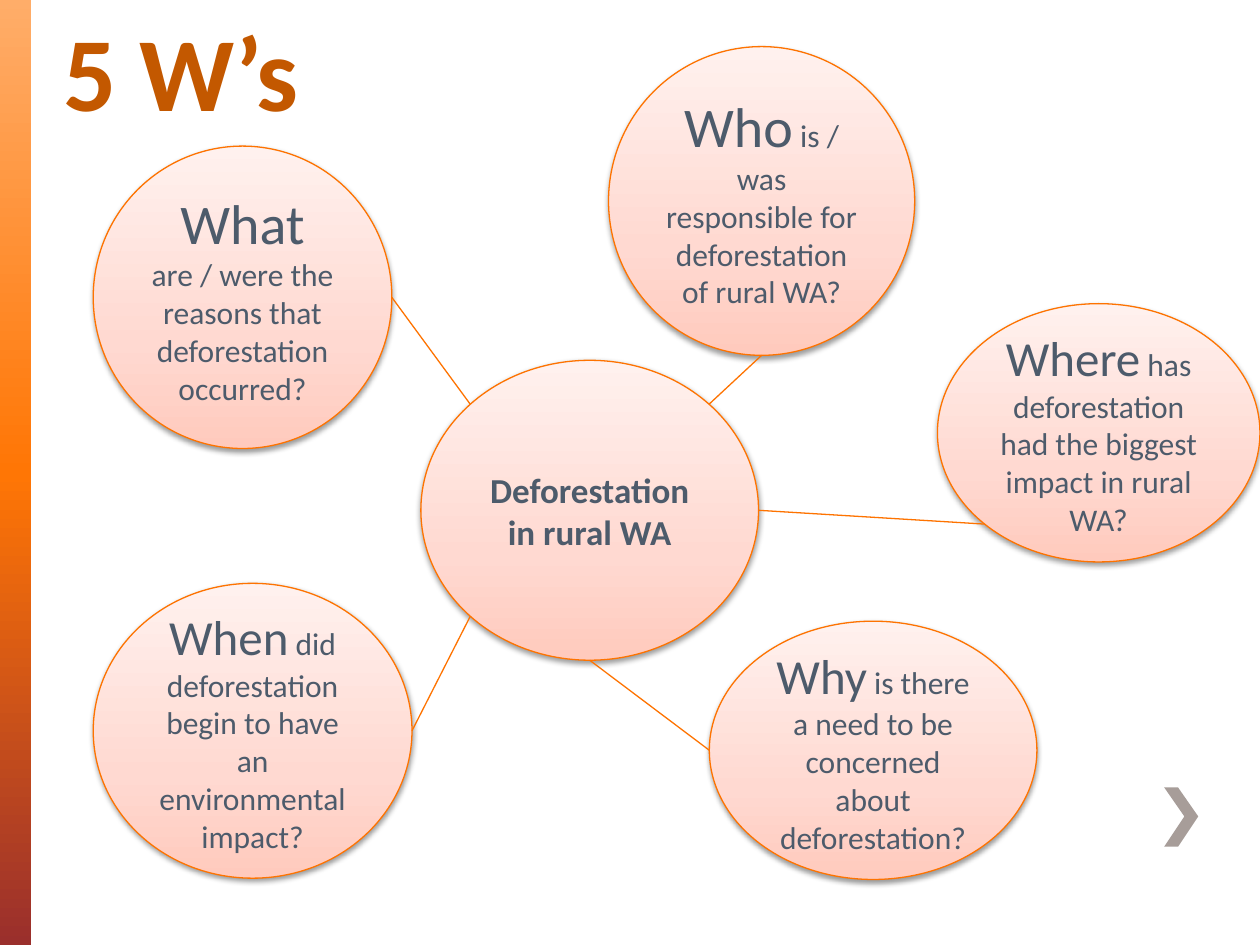
import math

import lxml.etree
import pptx
import pptx.dml.color
import pptx.enum.shapes
import pptx.enum.text
import pptx.oxml.ns
import pptx.util

PX = 9144
FONT = "Calibri"
COLORS = {
    "title": "C35800", "text": "4D5B6B", "line": "FE7300", "chevron": "A79D99", "shadow": "000000",
    "band_top": "FFAD69", "band_mid": "FF7605", "band_end": "9A2F2C",
    "bubble_low": "FFCABD", "bubble_mid": "FFD9D1", "bubble_high": "FFF1EE",
}
BAND_STOPS = [(0, "band_top"), (50, "band_mid"), (100, "band_end")]
BUBBLE_STOPS = [(0, "bubble_low"), (35, "bubble_mid"), (100, "bubble_high")]
SHAPES = pptx.enum.shapes.MSO_SHAPE
ALIGN = pptx.enum.text.PP_ALIGN
ANCHOR = pptx.enum.text.MSO_ANCHOR

CENTRE = (334, 286, 268, 238)
QUESTIONS = [
    ((483, 37, 243, 245), "Who", " is / was responsible for deforestation of rural WA?", 32, "bottom", "top right"),
    ((74, 116, 237, 240), "What ", "are / were the reasons that deforestation occurred?", 32, "right", "top left"),
    ((744, 241, 256, 205), "Where", " has deforestation had the biggest impact in rural WA?", 28, "bottom left", "right"),
    ((74, 463, 253, 234), "When", " did deforestation begin to have an environmental impact?", 28, "right", "bottom left"),
    ((563, 493, 260, 205), "Why", " is there a need to be concerned about deforestation?", 28, "left", "bottom"),
]
ANGLES = {"right": 0, "bottom": 90, "bottom left": 135, "left": 180, "top left": 225, "top right": 315}


def rgb(name):
    return pptx.dml.color.RGBColor.from_string(COLORS[name])


def emu(lengths):
    return [round(n * PX) for n in lengths]


def sub(parent, tag, **attrs):
    return lxml.etree.SubElement(parent, pptx.oxml.ns.qn(tag), attrs)


def add_run(p, text, size, color="text", bold=False):
    r = p.add_run()
    r.text = text
    r.font.name = FONT
    r.font.size = pptx.util.Pt(size)
    r.font.bold = bold
    r.font.color.rgb = rgb(color)


def set_gradient(sp, stops, angle):
    sp.fill.gradient()
    sp.fill.gradient_angle = angle
    gs_list = next(sp._element.iter(pptx.oxml.ns.qn("a:gsLst")))
    for gs in list(gs_list):
        gs_list.remove(gs)
    for position, name in stops:
        gs = sub(gs_list, "a:gs", pos=str(position * 1000))
        sub(gs, "a:srgbClr", val=COLORS[name])


def set_shadow(sp):
    sp.shadow.inherit = False
    effects = sp._element.spPr.find(pptx.oxml.ns.qn("a:effectLst"))
    outer = sub(effects, "a:outerShdw", blurRad=str(pptx.util.Pt(3.1)), dist=str(pptx.util.Pt(1.6)),
                dir="5400000", rotWithShape="0")
    sub(sub(outer, "a:srgbClr", val=COLORS["shadow"]), "a:alpha", val="38000")


def add_band(s, box):
    sp = s.shapes.add_shape(SHAPES.RECTANGLE, *emu(box))
    sp.shadow.inherit = False
    sp.line.fill.background()
    set_gradient(sp, BAND_STOPS, 270)


def add_chevron(s, box):
    x, y, w, h = box
    arm = 11
    builder = s.shapes.build_freeform(x + arm, y, scale=PX)
    builder.add_line_segments([(x, y), (x + w - arm, y + h / 2), (x, y + h),
                               (x + arm, y + h), (x + w, y + h / 2)])
    sp = builder.convert_to_shape()
    sp.shadow.inherit = False
    sp.fill.solid()
    sp.fill.fore_color.rgb = rgb("chevron")
    sp.line.fill.background()


def add_title(s, box):
    sp = s.shapes.title
    sp.left, sp.top, sp.width, sp.height = emu(box)
    tf = sp.text_frame
    tf.word_wrap = False
    tf.auto_size = pptx.enum.text.MSO_AUTO_SIZE.SHAPE_TO_FIT_TEXT
    tf.vertical_anchor = ANCHOR.TOP
    p = tf.paragraphs[0]
    p.alignment = ALIGN.LEFT
    add_run(p, "5 W’s", 60, color="title", bold=True)


def add_bubble(s, box):
    sp = s.shapes.add_shape(SHAPES.OVAL, *emu(box))
    set_gradient(sp, BUBBLE_STOPS, 90)
    sp.line.color.rgb = rgb("line")
    sp.line.width = pptx.util.Pt(0.75)
    set_shadow(sp)
    tf = sp.text_frame
    tf.word_wrap = True
    tf.vertical_anchor = ANCHOR.MIDDLE
    p = tf.paragraphs[0]
    p.alignment = ALIGN.CENTER
    return p


def rim_point(box, side):
    x, y, w, h = box
    angle = math.radians(ANGLES[side])
    return x + w / 2 * (1 + math.cos(angle)), y + h / 2 * (1 + math.sin(angle))


def add_link(s, start, end):
    cxn = s.shapes.add_connector(pptx.enum.shapes.MSO_CONNECTOR.STRAIGHT, *emu(start + end))
    cxn.line.color.rgb = rgb("line")
    cxn.line.width = pptx.util.Pt(0.75)
    sub(cxn._element.spPr, "a:effectLst")


def add_mind_map(s):
    for box, word, rest, size, _, _ in QUESTIONS:
        p = add_bubble(s, box)
        add_run(p, word, size)
        add_run(p, rest, 18)
    add_run(add_bubble(s, CENTRE), "Deforestation in rural WA", 20, bold=True)
    for box, _, _, _, side, centre_side in QUESTIONS:
        add_link(s, rim_point(CENTRE, centre_side), rim_point(box, side))


def main():
    prs = pptx.Presentation()
    prs.slide_width, prs.slide_height = emu((1000, 750))
    s = prs.slides.add_slide(prs.slide_layouts[5])
    add_band(s, (0, 0, 25, 750))
    add_chevron(s, (924, 625, 27, 47))
    add_title(s, (40, 0, 209, 111))
    add_mind_map(s)
    prs.save("out.pptx")


if __name__ == "__main__":
    main()
